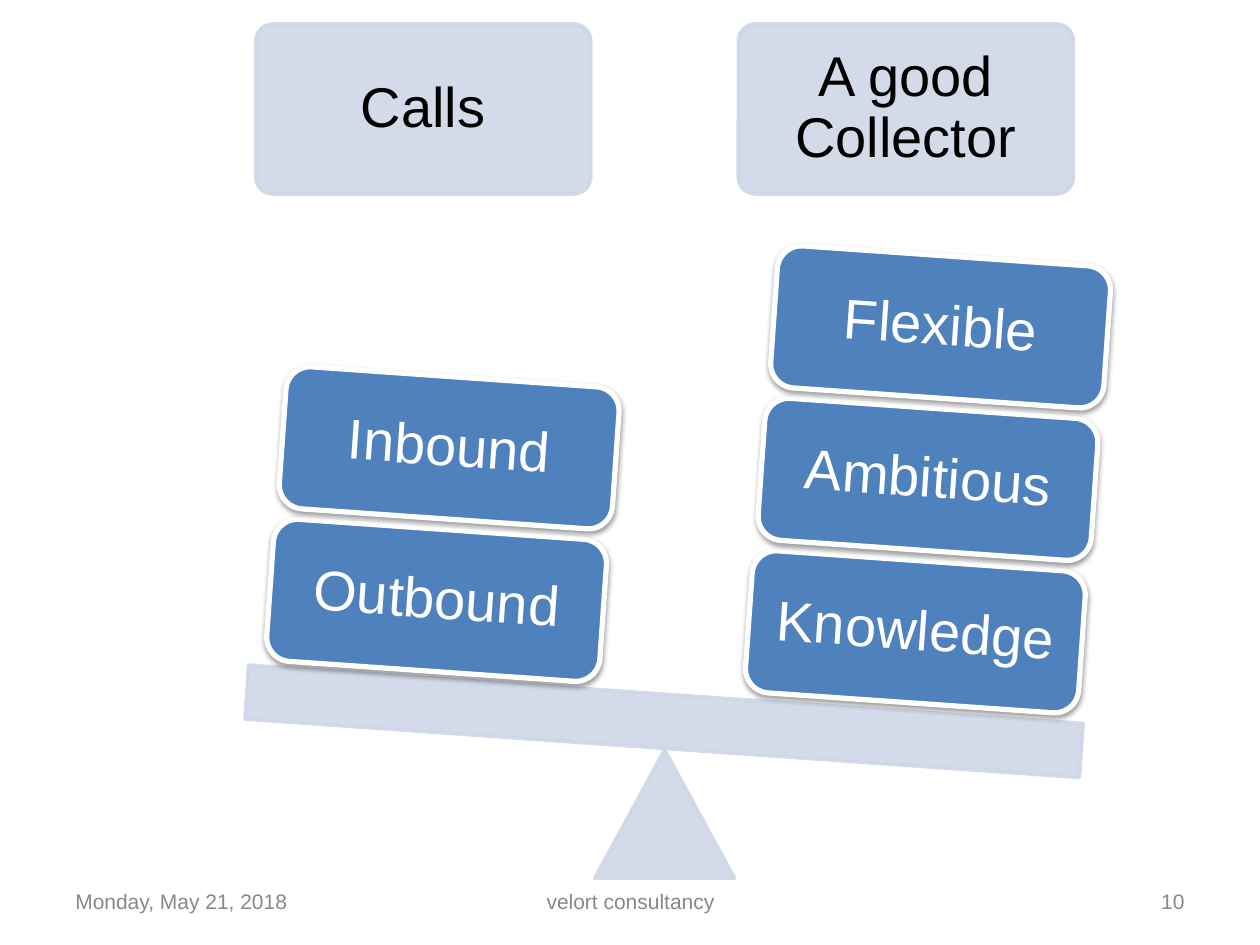
import pptx
import pptx.util
import pptx.dml.color
import pptx.enum.shapes
import pptx.enum.text
import pptx.oxml
import pptx.oxml.ns

Inches = pptx.util.Inches
Pt = pptx.util.Pt
RGBColor = pptx.dml.color.RGBColor
SHAPE = pptx.enum.shapes.MSO_SHAPE
ALIGN = pptx.enum.text.PP_ALIGN
MIDDLE = pptx.enum.text.MSO_ANCHOR.MIDDLE

PALE = RGBColor(0xCF, 0xD7, 0xE7)
BLUE = RGBColor(0x4F, 0x81, 0xBD)
WHITE = RGBColor(0xFF, 0xFF, 0xFF)
BLACK = RGBColor(0, 0, 0)
GRAY = RGBColor(0x88, 0x88, 0x88)
TILT = 4
SHADOW = (
    f'<a:outerShdw {pptx.oxml.ns.nsdecls("a")} blurRad="{Pt(3.1)}" dist="{Pt(1.6)}" '
    'dir="5400000" rotWithShape="0"><a:srgbClr val="000000">'
    '<a:alpha val="38000"/></a:srgbClr></a:outerShdw>'
)


def add_text(shape, text, size, color, align, inset):
    """Fill the shape's frame with one formatted run."""
    frame = shape.text_frame
    frame.word_wrap = True
    frame.vertical_anchor = MIDDLE
    frame.margin_left = frame.margin_right = Inches(inset[0])
    frame.margin_top = frame.margin_bottom = Inches(inset[1])
    para = frame.paragraphs[0]
    para.alignment = align
    run = para.add_run()
    run.text = text
    run.font.name = "Arial"
    run.font.size = Pt(size)
    run.font.color.rgb = color
    return para


def add_form(slide, kind, box, fill, line, width):
    """Add a filled and outlined shape without a shadow."""
    shape = slide.shapes.add_shape(kind, *map(Inches, box))
    shape.shadow.inherit = False
    shape.fill.solid()
    shape.fill.fore_color.rgb = fill
    shape.line.color.rgb = line
    shape.line.width = Pt(width)
    return shape


def add_pale(slide, kind, box):
    """Add a pale shape whose fill and line are slightly transparent."""
    shape = add_form(slide, kind, box, PALE, PALE, 2)
    for color in shape._element.spPr.iter(pptx.oxml.ns.qn("a:srgbClr")):
        alpha = pptx.oxml.parse_xml(f'<a:alpha {pptx.oxml.ns.nsdecls("a")} val="90000"/>')
        color.append(alpha)
    return shape


def add_head(slide, left, text):
    """Add the heading panel above one side of the scale."""
    panel = add_pale(slide, SHAPE.ROUNDED_RECTANGLE, (left, 0.19, 2.66, 1.35))
    panel.adjustments[0] = 0.1
    add_text(panel, text, 32, BLACK, ALIGN.CENTER, (0.13, 0.13)).line_spacing = 0.9


def add_stack(slide, left, top, names):
    """Pile tilted weights upward from the lowest one."""
    for step, name in enumerate(names):
        box = (left + 0.1 * step, top - 1.21 * step, 2.65, 1.13)
        card = add_form(slide, SHAPE.ROUNDED_RECTANGLE, box, BLUE, WHITE, 3)
        card.adjustments[0] = 0.17
        card.rotation = TILT
        effects = card._element.spPr.find(pptx.oxml.ns.qn("a:effectLst"))
        effects.append(pptx.oxml.parse_xml(SHADOW))
        add_text(card, name, 32, WHITE, ALIGN.CENTER, (0.1, 0.13)).line_spacing = 0.9


def add_scale(slide):
    """Add the pivot and the tilted beam."""
    add_pale(slide, SHAPE.ISOSCELES_TRIANGLE, (4.72, 5.95, 1.11, 1.02))
    beam = add_pale(slide, SHAPE.RECTANGLE, (1.95, 5.51, 6.64, 0.43))
    beam.rotation = TILT


def add_foot(slide, left, width, text, align):
    """Add one small label at the foot of the slide."""
    label = slide.shapes.add_textbox(*map(Inches, (left, 6.95, width, 0.4)))
    add_text(label, text, 12, GRAY, align, (0.1, 0.05))


def main():
    """Build and save the slide."""
    deck = pptx.Presentation()
    deck.slide_width = Inches(10)
    deck.slide_height = Inches(7.5)
    slide = deck.slides.add_slide(deck.slide_layouts[6])
    add_head(slide, 2.03, "Calls")
    add_head(slide, 5.86, "A good Collector")
    add_scale(slide)
    add_stack(slide, 5.94, 4.45, ("Knowledge", "Ambitious", "Flexible"))
    add_stack(slide, 2.14, 4.2, ("Outbound", "Inbound"))
    add_foot(slide, 0.5, 2.33, "Monday, May 21, 2018", ALIGN.LEFT)
    add_foot(slide, 7.17, 2.33, "10", ALIGN.RIGHT)
    add_foot(slide, 3.42, 3.17, "velort consultancy", ALIGN.CENTER)
    deck.save("out.pptx")


if __name__ == "__main__":
    main()
